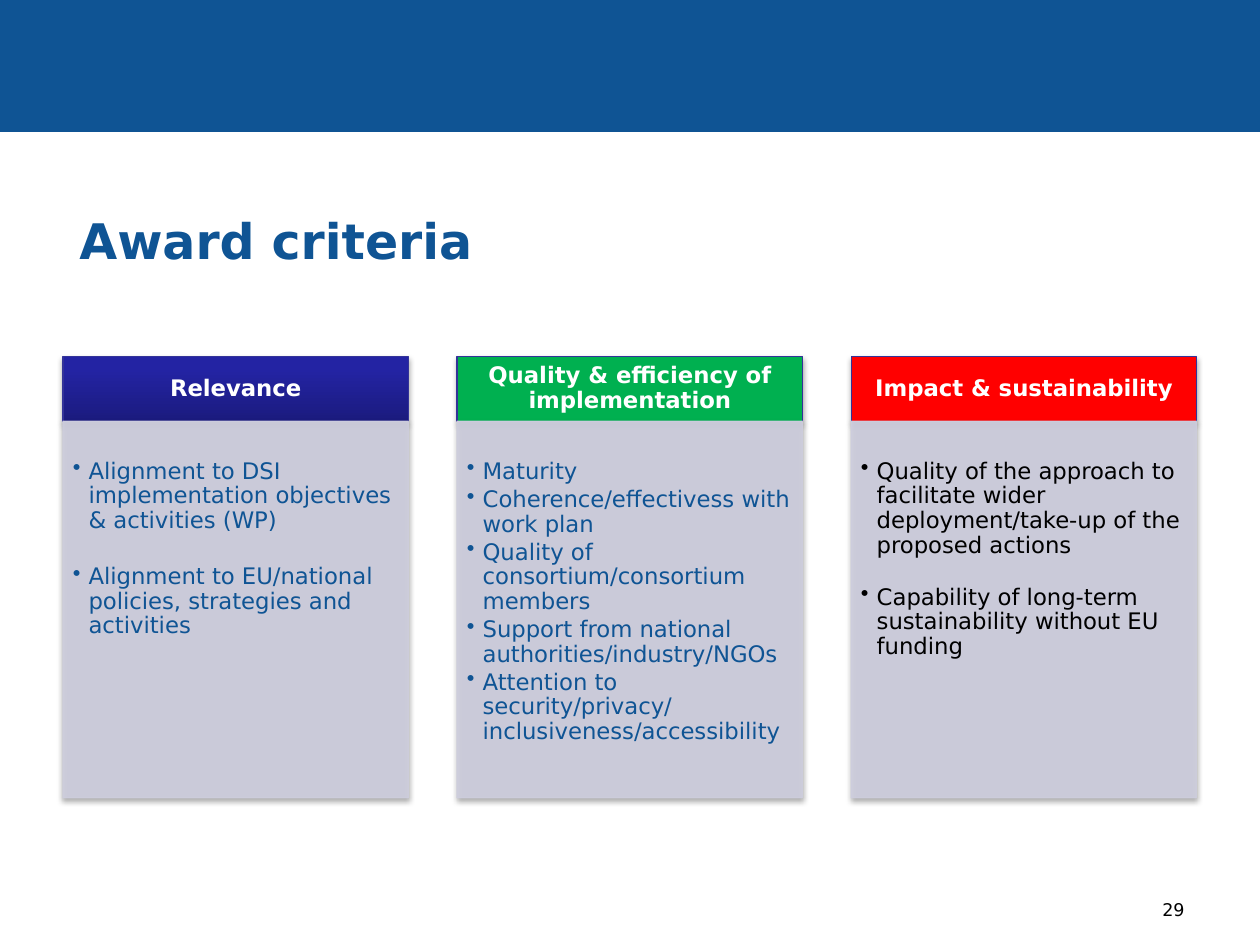
"""Build the award criteria slide with three headed columns."""
import pptx
import pptx.dml.color
import pptx.enum.dml
import pptx.enum.shapes
import pptx.enum.text
import pptx.oxml
import pptx.oxml.ns
import pptx.util

Pt = pptx.util.Pt
ALIGN = pptx.enum.text.PP_ALIGN
ANCHOR = pptx.enum.text.MSO_ANCHOR
FONT = "DejaVu Sans"
COLORS = {
    "blue": "0F5494", "navy": "1B1B7E", "indigo": "2323A3", "edge": "333399",
    "green": "00B050", "red": "FF0000", "panel": "CECEDE",
    "white": "FFFFFF", "black": "000000",
}
COLUMNS = [
    ("Relevance", None, "blue", 18, [
        "Alignment to DSI implementation objectives & activities (WP)",
        "Alignment to EU/national policies, strategies and activities",
    ]),
    ("Quality & efficiency of implementation", "green", "blue", 2, [
        "Maturity",
        "Coherence/effectivess with work plan",
        "Quality of consortium/consortium members",
        "Support from national authorities/industry/NGOs",
        "Attention to security/privacy/\vinclusiveness/accessibility",
    ]),
    ("Impact & sustainability", "red", "black", 15.6, [
        "Quality of the approach to facilitate wider deployment/take-up of the proposed actions",
        "Capability of long-term sustainability without EU funding",
    ]),
]
COLUMN_LEFT, COLUMN_PITCH, COLUMN_WIDTH = 36, 225.2, 197.3
HEADER_TOP, HEADER_HEIGHT = 203.6, 37.1
PANEL_TOP, PANEL_HEIGHT = 240.7, 215.2


def rgb(name):
    return pptx.dml.color.RGBColor.from_string(COLORS[name])


def element(xml):
    namespace = pptx.oxml.ns.nsdecls("a")
    return pptx.oxml.parse_xml(xml.replace("/>", f" {namespace}/>", 1) if xml.count("<") == 1
                               else xml.replace(">", f" {namespace}>", 1))


def style_runs(paragraph, size, color, bold=False):
    for span in paragraph.runs:
        span.font.name = FONT
        span.font.size = Pt(size)
        span.font.bold = bold
        span.font.color.rgb = rgb(color)


def set_frame(frame, anchor, insets):
    frame.word_wrap = True
    frame.auto_size = pptx.enum.text.MSO_AUTO_SIZE.NONE
    frame.vertical_anchor = anchor
    frame.margin_left, frame.margin_top, frame.margin_right, frame.margin_bottom = map(Pt, insets)


def place(shape, left, top, width, height):
    shape.left, shape.top, shape.width, shape.height = map(Pt, (left, top, width, height))


def add_rectangle(slide, bounds, fill, line):
    box = slide.shapes.add_shape(pptx.enum.shapes.MSO_SHAPE.RECTANGLE, *map(Pt, bounds))
    box.shadow.inherit = False
    if fill:
        box.fill.solid()
        box.fill.fore_color.rgb = rgb(fill)
    box.line.color.rgb = rgb(line)
    box.line.width = Pt(0.75)
    return box


def add_shadow(shape):
    effects = shape._element.spPr.find(pptx.oxml.ns.qn("a:effectLst"))
    effects.append(element(
        f'<a:outerShdw blurRad="{Pt(3.1)}" dist="{Pt(1.8)}" dir="5400000" rotWithShape="0">'
        '<a:srgbClr val="000000"><a:alpha val="35000"/></a:srgbClr></a:outerShdw>'))


def set_gradient(shape):
    shape.fill.gradient()
    shape.fill.gradient_angle = 90
    for stop, color, position in zip(shape.fill.gradient_stops, ("navy", "indigo"), (0, 0.8)):
        stop.color.rgb = rgb(color)
        stop.position = position


def add_header(slide, left, text, fill):
    box = add_rectangle(slide, (left, HEADER_TOP, COLUMN_WIDTH, HEADER_HEIGHT), fill, "edge")
    if not fill:
        set_gradient(box)
    add_shadow(box)
    set_frame(box.text_frame, ANCHOR.MIDDLE, (7.2, 4.2, 7.2, 4.2))
    box.text_frame.text = text
    para = box.text_frame.paragraphs[0]
    para.alignment = ALIGN.CENTER
    para.line_spacing = 0.9
    style_runs(para, 13, "white", True)


def add_panel(slide, left, items, color, gap):
    box = add_rectangle(slide, (left, PANEL_TOP, COLUMN_WIDTH, PANEL_HEIGHT), "panel", "panel")
    for tint in box._element.spPr.iter(pptx.oxml.ns.qn("a:srgbClr")):
        tint.append(element('<a:alpha val="90000"/>'))
    add_shadow(box)
    set_frame(box.text_frame, ANCHOR.TOP, (5.6, 22, 7.2, 7.9))
    box.text_frame.text = "\n".join(items)
    for para in box.text_frame.paragraphs:
        properties = para._p.get_or_add_pPr()
        properties.set("marL", str(Pt(9)))
        properties.set("indent", str(-Pt(9)))
        properties.append(element('<a:buChar char="•"/>'))
        para.alignment = ALIGN.LEFT
        para.line_spacing = 0.9
        para.space_after = Pt(gap)
        style_runs(para, 13, color)


def set_title(slide, text):
    title = slide.shapes.title
    place(title, 31, 105.8, 648, 62.6)
    set_frame(title.text_frame, ANCHOR.MIDDLE, (14.4, 3.6, 7.2, 3.6))
    title.text_frame.text = text
    para = title.text_frame.paragraphs[0]
    para.alignment = ALIGN.LEFT
    style_runs(para, 28, "blue", True)


def add_page_number(slide, text):
    box = slide.shapes.add_textbox(*map(Pt, (516, 491.8, 168, 37.4)))
    set_frame(box.text_frame, ANCHOR.BOTTOM, (7.2, 3.6, 7.2, 3.6))
    box.text_frame.text = text
    para = box.text_frame.paragraphs[0]
    para.alignment = ALIGN.RIGHT
    style_runs(para, 10, "black")


def main():
    deck = pptx.Presentation()
    deck.slide_width, deck.slide_height = Pt(720), Pt(540)
    slide = deck.slides.add_slide(deck.slide_layouts[5])
    add_rectangle(slide, (0, 0, 720, 75.3), "blue", "blue")
    set_title(slide, "Award criteria")
    for index, (heading, fill, color, gap, items) in enumerate(COLUMNS):
        left = COLUMN_LEFT + index * COLUMN_PITCH
        add_header(slide, left, heading, fill)
        add_panel(slide, left, items, color, gap)
    add_page_number(slide, "29")
    deck.save("out.pptx")


if __name__ == "__main__":
    main()
